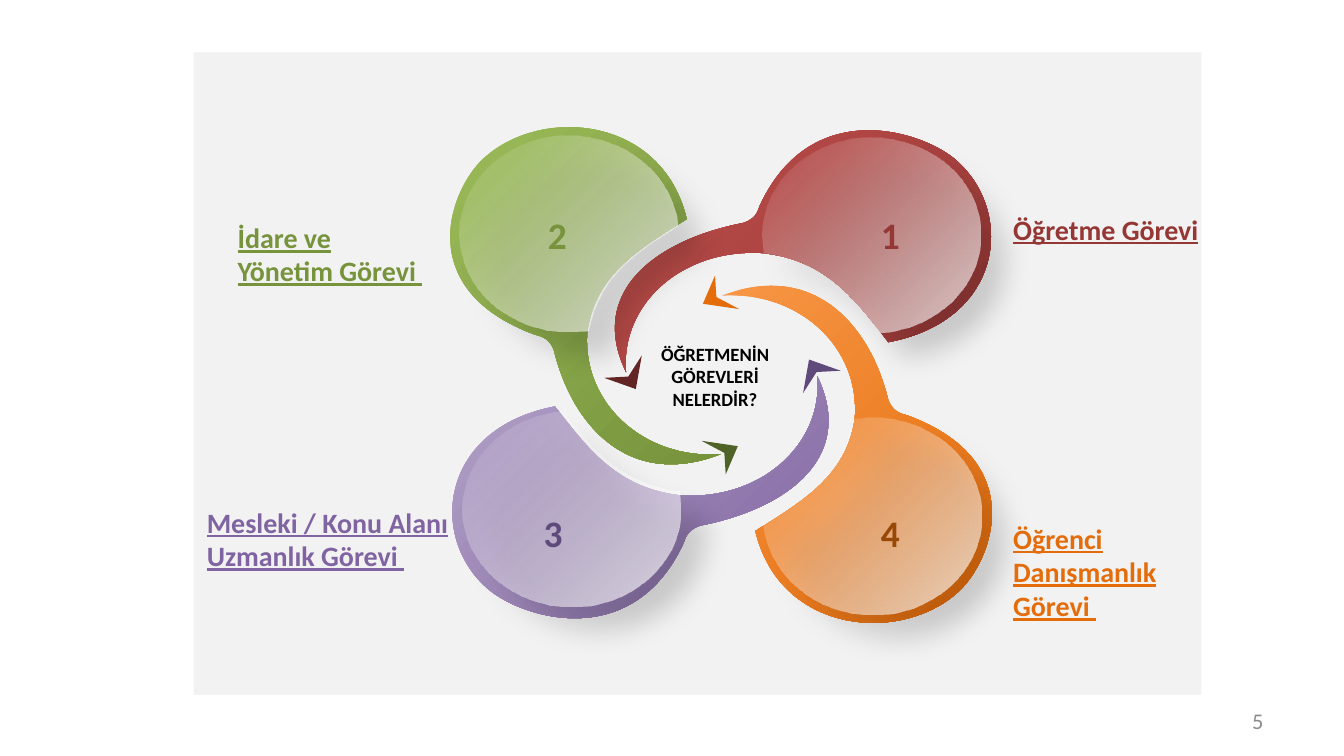
from lxml.etree import SubElement
from pptx import Presentation
from pptx.dml.color import RGBColor
from pptx.enum.shapes import MSO_SHAPE
from pptx.enum.text import MSO_ANCHOR, MSO_AUTO_SIZE, PP_ALIGN
from pptx.oxml import parse_xml
from pptx.oxml.ns import nsdecls, qn
from pptx.util import Inches, Pt

TITLE = "ÖĞRETMENİN GÖREVLERİ NELERDİR?"

# Text, box (left, top, width, height), colour
DUTIES = [
    ("Öğretme Görevi", (7.44, 1.53, 1.58, 0.35), "953735"),
    ("İdare ve Yönetim Görevi ", (1.67, 1.59, 1.62, 0.61), "77933C"),
    ("Mesleki / Konu Alanı Uzmanlık Görevi ", (1.44, 3.71, 2.09, 0.61), "8064A2"),
    ("Öğrenci Danışmanlık Görevi ", (7.44, 3.83, 1.73, 0.86), "E46C0A"),
]

# Frames are given before rotation
PETALS = [
    dict(number="1", rotation=90, dark="953735", light="C0504D", tip="632523", ink="953735",
         body=(5.08, 0.47, 1.8, 2.8), arrow=(4.51, 2.63, 0.25, 0.28),
         glass=(5.76, 0.94, 1.45, 1.62), label=(6.18, 1.53)),
    dict(number="4", rotation=180, dark="E46C0A", light="F79646", tip="E46C0A", ink="984807",
         body=(5.37, 2.13, 2.01, 2.51), arrow=(5.23, 2.05, 0.27, 0.25),
         glass=(5.68, 3.11, 1.62, 1.46), label=(6.18, 3.75)),
    dict(number="3", rotation=270, dark="8064A2", light="B3A2C7", tip="604A7B", ink="604A7B",
         body=(3.86, 2.3, 1.8, 2.8), arrow=(5.99, 2.66, 0.25, 0.28),
         glass=(3.53, 2.98, 1.45, 1.62), label=(3.67, 3.75)),
    dict(number=" 2", rotation=0, dark="77933C", light="9BBB59", tip="4F6228", ink="77933C",
         body=(3.35, 0.94, 2.01, 2.51), arrow=(5.22, 3.28, 0.27, 0.25),
         glass=(3.42, 1.01, 1.62, 1.46), label=(3.67, 1.53)),
]

# Outline size, start point, then segments: one point is a line, three are a curve
BODY = ((201, 251), (27, 22), [
    [(70, -15), (158, -7), (176, 69)],
    [(141, 91), (108, 110), (102, 153)],
    [(98, 207), (145, 248), (201, 244)],
    [(134, 270), (91, 224), (77, 166)],
    [(75, 161), (72, 157), (63, 155)],
    [(-32, 120), (2, 42), (27, 22)],
])
ARROW = ((27, 25), (0, 0), [[(27, 4)], [(18, 25)], [(17, 9)]])
GLASS = ((162, 146), (81, 0), [
    [(124, 0), (158, 30), (162, 67)],
    [(139, 82), (103, 101), (96, 145)],
    [(91, 145), (86, 146), (81, 146)],
    [(36, 146), (0, 113), (0, 73)],
    [(0, 33), (36, 0), (81, 0)],
])


def color(value):
    return RGBColor.from_string(value)


def write(shape, text, size, ink, bold=True, underline=None, align=PP_ALIGN.LEFT):
    frame = shape.text_frame
    frame.word_wrap = True
    frame.text = text
    paragraph = frame.paragraphs[0]
    paragraph.alignment = align
    font = paragraph.runs[0].font
    font.name, font.size, font.bold, font.underline = "Calibri", Pt(size), bold, underline
    font.color.rgb = color(ink)


def add_text(shapes, box, *args, **options):
    shape = shapes.add_textbox(*map(Inches, box))
    write(shape, *args, **options)
    return shape


def add_outline(shapes, outline, box, rotation):
    """Add a closed freeform with curves, stretched to the box and then rotated."""
    size, start, segments = outline
    builder = shapes.build_freeform(0, 0, scale=Inches(0.01))
    builder.add_line_segments([size])
    shape = builder.convert_to_shape()
    shape.left, shape.top, shape.width, shape.height = map(Inches, box)
    shape.rotation = rotation
    shape.line.fill.background()
    shape.shadow.inherit = False

    path = next(shape._element.iter(qn("a:path")))
    for child in list(path):
        path.remove(child)
    path.set("w", str(size[0]))
    path.set("h", str(size[1]))
    for index, points in enumerate([[start]] + segments):
        tag = "a:moveTo" if index == 0 else "a:lnTo" if len(points) == 1 else "a:cubicBezTo"
        command = SubElement(path, qn(tag))
        for x, y in points:
            SubElement(command, qn("a:pt"), x=str(x), y=str(y))
    SubElement(path, qn("a:close"))
    return shape


def fill_radial(shape, stops):
    """Fill from the lower right corner outwards; stops are (position, colour, opacity)."""
    marks = "".join(
        f'<a:gs pos="{position * 1000}"><a:srgbClr val="{value}">'
        f'<a:alpha val="{opacity * 1000}"/></a:srgbClr></a:gs>'
        for position, value, opacity in stops)
    gradient = parse_xml(
        f'<a:gradFill {nsdecls("a")} rotWithShape="0"><a:gsLst>{marks}</a:gsLst>'
        '<a:path path="circle"><a:fillToRect l="100000" t="100000"/></a:path></a:gradFill>')
    shape._element.spPr.find(qn("a:custGeom")).addnext(gradient)


def add_shadow(shape):
    effects = shape._element.spPr.find(qn("a:effectLst"))
    effects.append(parse_xml(
        f'<a:outerShdw {nsdecls("a")} blurRad="{Pt(15)}" dist="{Pt(18)}" dir="2700000" '
        'algn="tl" rotWithShape="0"><a:srgbClr val="000000"><a:alpha val="30000"/>'
        '</a:srgbClr></a:outerShdw>'))


def add_petal(slide, petal):
    shapes = slide.shapes.add_group_shape().shapes
    rotation = petal["rotation"]
    body = add_outline(shapes, BODY, petal["body"], rotation)
    fill_radial(body, [(0, petal["dark"], 100), (100, petal["light"], 100)])
    arrow = add_outline(shapes, ARROW, petal["arrow"], rotation)
    arrow.fill.solid()
    arrow.fill.fore_color.rgb = color(petal["tip"])
    glass = add_outline(shapes, GLASS, petal["glass"], rotation)
    fill_radial(glass, [(0, "FFFFFF", 74), (100, "FFFFFF", 0)])
    add_shadow(glass)
    add_text(shapes, (*petal["label"], 0.89, 0.44), petal["number"], 20, petal["ink"],
             align=PP_ALIGN.CENTER)


def main():
    presentation = Presentation()
    presentation.slide_width = Inches(10)
    presentation.slide_height = Inches(10 * 9 / 16)
    slide = presentation.slides.add_slide(presentation.slide_layouts[5])

    panel = slide.shapes.add_shape(MSO_SHAPE.RECTANGLE, *map(Inches, (1.44, 0.39, 7.5, 4.78)))
    panel.shadow.inherit = False
    panel.fill.solid()
    panel.fill.fore_color.rgb = color("F2F2F2")
    panel.line.fill.background()

    for petal in PETALS:
        add_petal(slide, petal)
    for text, box, ink in DUTIES:
        add_text(slide.shapes, box, text, 15, ink, underline=True)

    title = slide.shapes.title
    title.left, title.top, title.width, title.height = map(Inches, (4.61, 2.5, 1.42, 0.61))
    write(title, TITLE, 10, "000000", align=PP_ALIGN.CENTER)
    title.text_frame.vertical_anchor = MSO_ANCHOR.TOP
    title.text_frame.auto_size = MSO_AUTO_SIZE.NONE
    slide.shapes._spTree.append(title._element)  # bring in front of the panel

    number = add_text(slide.shapes, (7.17, 5.21, 2.33, 0.3), "5", 12, "8C8C8C",
                      bold=False, align=PP_ALIGN.RIGHT)
    number.text_frame.vertical_anchor = MSO_ANCHOR.MIDDLE
    presentation.save("out.pptx")


if __name__ == "__main__":
    main()
